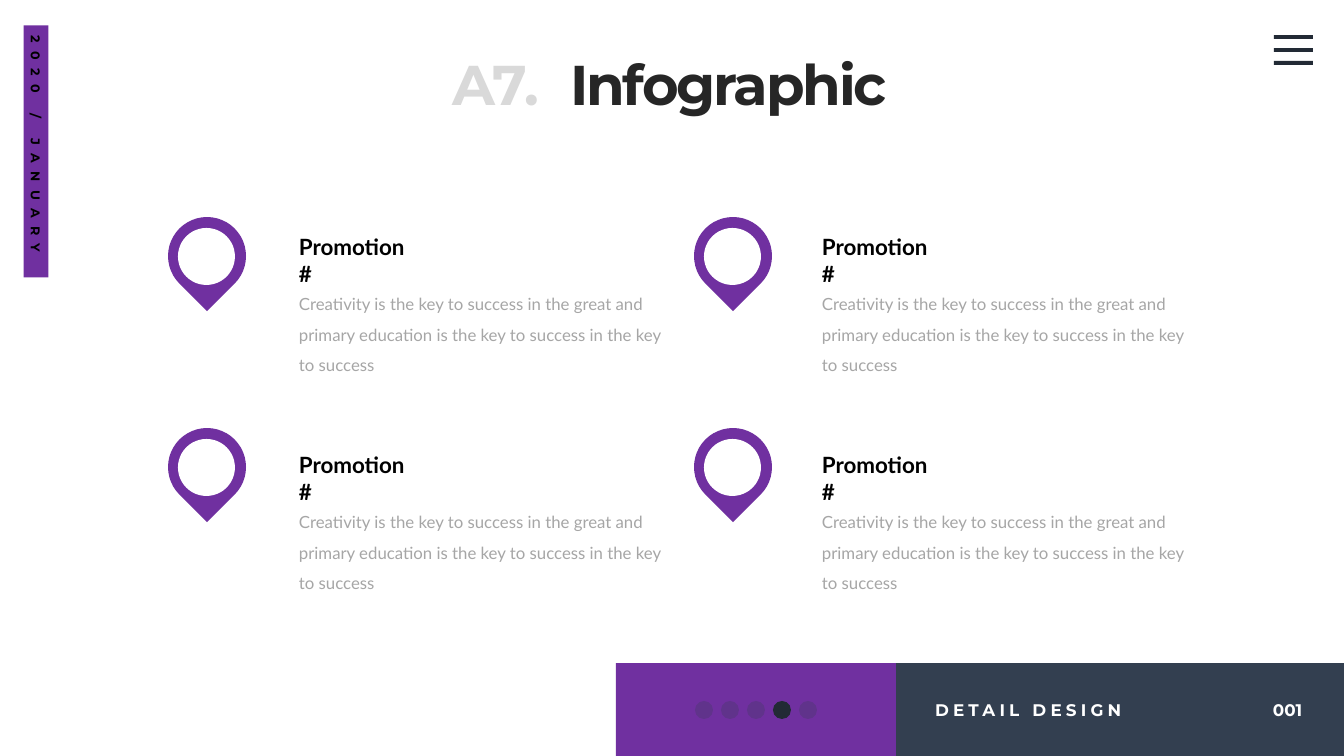
"""Build the Infographic slide with four promotion pins."""
from itertools import product

from lxml.etree import SubElement
from pptx import Presentation
from pptx.dml.color import RGBColor
from pptx.enum.shapes import MSO_SHAPE as Geo
from pptx.enum.text import MSO_ANCHOR as Anchor, MSO_AUTO_SIZE as Auto, PP_ALIGN as Align
from pptx.oxml.ns import qn
from pptx.util import Pt

PX = 914400 / 100.8
PURPLE, SLATE, NAVY = "7030A0", "333F50", "222A35"
BODY = ("Creativity is the key to success in the great and primary education "
        "is the key to success in the key to success")
CARDS = [
    [("Promotion #", BODY), ("Promotion #", BODY)],
    [("Promotion #", BODY), ("Promotion #", BODY)],
]
LABELS = [
    ("001", (1263, 695, 50, 30), 0),
    ("DETAIL DESIGN", (925, 695, 213, 30), 3),
]
DOTS, ACTIVE, BARS = 5, 3, 3


def emu(*nums):
    return [round(n * PX) for n in nums]


def color(code):
    return RGBColor.from_string(code)


def shape(home, geo, box, fill, turn=0, alpha=None):
    item = home.shapes.add_shape(geo, *emu(*box))
    item.shadow.inherit = False
    item.fill.solid()
    item.fill.fore_color.rgb = color(fill)
    item.line.fill.background()
    item.rotation = turn
    if alpha:
        tint = next(item._element.iter(qn("a:srgbClr")))
        SubElement(tint, qn("a:alpha")).set("val", str(alpha * 1000))
    return item


def write(item, text, size, face, ink, bold=True, gap=0, wrap=False,
          align=Align.LEFT, anchor=Anchor.TOP, line=None, pad=(10, 5)):
    frame = item.text_frame
    frame.word_wrap = wrap
    frame.auto_size = Auto.SHAPE_TO_FIT_TEXT
    frame.vertical_anchor = anchor
    frame.margin_left = frame.margin_right = emu(pad[0])[0]
    frame.margin_top = frame.margin_bottom = emu(pad[1])[0]
    para = frame.paragraphs[0]
    para.alignment = align
    if line:
        para.line_spacing = line
    run = para.add_run()
    run.text = text
    run.font.size = Pt(size)
    run.font.name = face
    run.font.bold = bold
    run.font.color.rgb = color(ink)
    if gap:
        run._r.get_or_add_rPr().set("spc", str(round(gap * 100)))


def label(slide, box, *args, **opts):
    write(slide.shapes.add_textbox(*emu(*box)), *args, **opts)


def card(slide, row, col):
    head, body = CARDS[row][col]
    x, y = 168 + 526 * col, 217 + 211 * row
    pin = slide.shapes.add_group_shape()
    shape(pin, Geo.TEAR, (x, y, 78, 78), PURPLE, 135)
    shape(pin, Geo.OVAL, (x + 10, y + 11, 57, 57), "FFFFFF")
    x, y = 289 + 523 * col, 228 + 218 * row
    label(slide, (x, y, 139, 37), head, 16, "Lato", "000000", wrap=True)
    label(slide, (x - 2, y + 50, 397, 101), body, 12, "Lato", "A6A6A6",
          bold=False, wrap=True, line=1.5, pad=(12, 6))


def footer(slide):
    shape(slide, Geo.RECTANGLE, (896, 663, 448, 93), SLATE)
    for text, box, gap in LABELS:
        label(slide, box, text, 12, "Montserrat", "FFFFFF", gap=gap)
    shape(slide, Geo.RECTANGLE, (616, 663, 280, 93), PURPLE)
    dots = slide.shapes.add_group_shape()
    for i in range(DOTS):
        fill, alpha = (NAVY, None) if i == ACTIVE else (SLATE, 25)
        shape(dots, Geo.OVAL, (695 + 26 * i, 701, 18, 18), fill, alpha=alpha)


def header(slide):
    date = shape(slide, Geo.RECTANGLE, (-90, 139, 252, 25), PURPLE, 90)
    write(date, "2020 / JANUARY", 9, "Montserrat", "000000", gap=6,
          anchor=Anchor.MIDDLE)
    menu = slide.shapes.add_group_shape()
    for i in range(BARS):
        shape(menu, Geo.RECTANGLE, (1274, 35 + 13 * i, 39, 4), NAVY)
    label(slide, (439, 45, 114, 78), "A7.", 40, "Montserrat", "D9D9D9",
          align=Align.CENTER)
    title = slide.shapes.title
    title.left, title.top, title.width, title.height = emu(558, 45, 341, 78)
    write(title, "Infographic", 40, "Montserrat", "262626", gap=-1.5,
          align=Align.CENTER)


def main():
    deck = Presentation()
    deck.slide_width, deck.slide_height = emu(1344, 756)
    slide = deck.slides.add_slide(deck.slide_layouts[5])
    for row, col in product(range(2), range(2)):
        card(slide, row, col)
    footer(slide)
    header(slide)
    deck.save("out.pptx")


if __name__ == "__main__":
    main()
